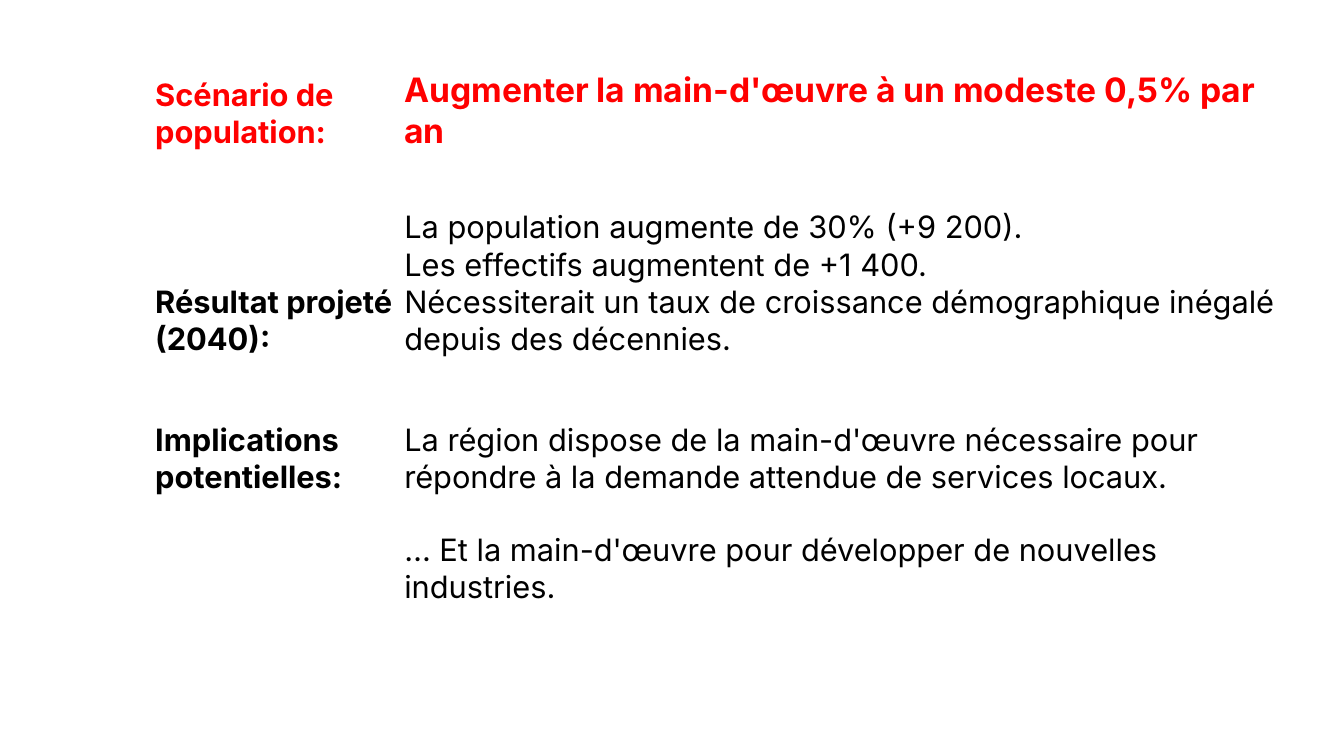
import pptx
import pptx.dml.color
import pptx.enum.text
import pptx.oxml
import pptx.oxml.ns
import pptx.util

Inches = pptx.util.Inches
Pt = pptx.util.Pt
Color = pptx.dml.color.RGBColor.from_string

theme = {"font": "Inter", "alert": "FF0000", "ink": "000000", "edge": "FFFFFF",
         "head": 24, "body": 22}

deck = pptx.Presentation()
deck.slide_width = Inches(13.33)
deck.slide_height = Inches(7.5)
slide = deck.slides.add_slide(deck.slide_layouts[6])

widths = [2.47, 8.87]
heights = [1.14, 2.05, 1.37, 1.09, 1.24]
rows = [
    (["Scénario de population:"],
     ["Augmenter la main-d'œuvre à un modeste 0,5% par an"]),
    (["Résultat projeté (2040):"],
     ["La population augmente de 30% (+9 200).",
      "Les effectifs augmentent de +1 400.",
      "Nécessiterait un taux de croissance démographique inégalé depuis des décennies."]),
    (["Implications potentielles:"],
     ["La région dispose de la main-d'œuvre nécessaire pour répondre à la demande attendue de services locaux."]),
    ([], ["… Et la main-d'œuvre pour développer de nouvelles industries."]),
    ([], []),
]

frame = slide.shapes.add_table(len(rows), len(widths), Inches(1.53), Inches(0.36),
                               Inches(sum(widths)), Inches(sum(heights)))
table = frame.table
table.first_row = False
table.horz_banding = False
for column, width in zip(table.columns, widths):
    column.width = Inches(width)
for row, height in zip(table.rows, heights):
    row.height = Inches(height)

inset = {"margin_left": Inches(0.01), "margin_top": Inches(0.01),
         "margin_right": Inches(0.01), "margin_bottom": 0,
         "vertical_anchor": pptx.enum.text.MSO_ANCHOR.BOTTOM}

for r, row in enumerate(rows):
    for c, lines in enumerate(row):
        cell = table.cell(r, c)
        for name, value in inset.items():
            setattr(cell, name, value)
        props = cell._tc.get_or_add_tcPr()
        for side in ("lnL", "lnR", "lnT", "lnB"):
            props.append(pptx.oxml.parse_xml(
                f'<a:{side} {pptx.oxml.ns.nsdecls("a")} w="{Pt(1)}"><a:solidFill>'
                f'<a:srgbClr val="{theme["edge"]}"/></a:solidFill></a:{side}>'))
        cell.fill.background()

        style = {"name": theme["font"], "bold": r == 0 or c == 0,
                 "size": Pt(theme["head"] if r == 0 and c == 1 else theme["body"])}
        cell.text = "\n".join(lines)
        for para in cell.text_frame.paragraphs:
            for name, value in style.items():
                setattr(para.font, name, value)
            para.font.color.rgb = Color(theme["alert"] if r == 0 else theme["ink"])

deck.save("out.pptx")
